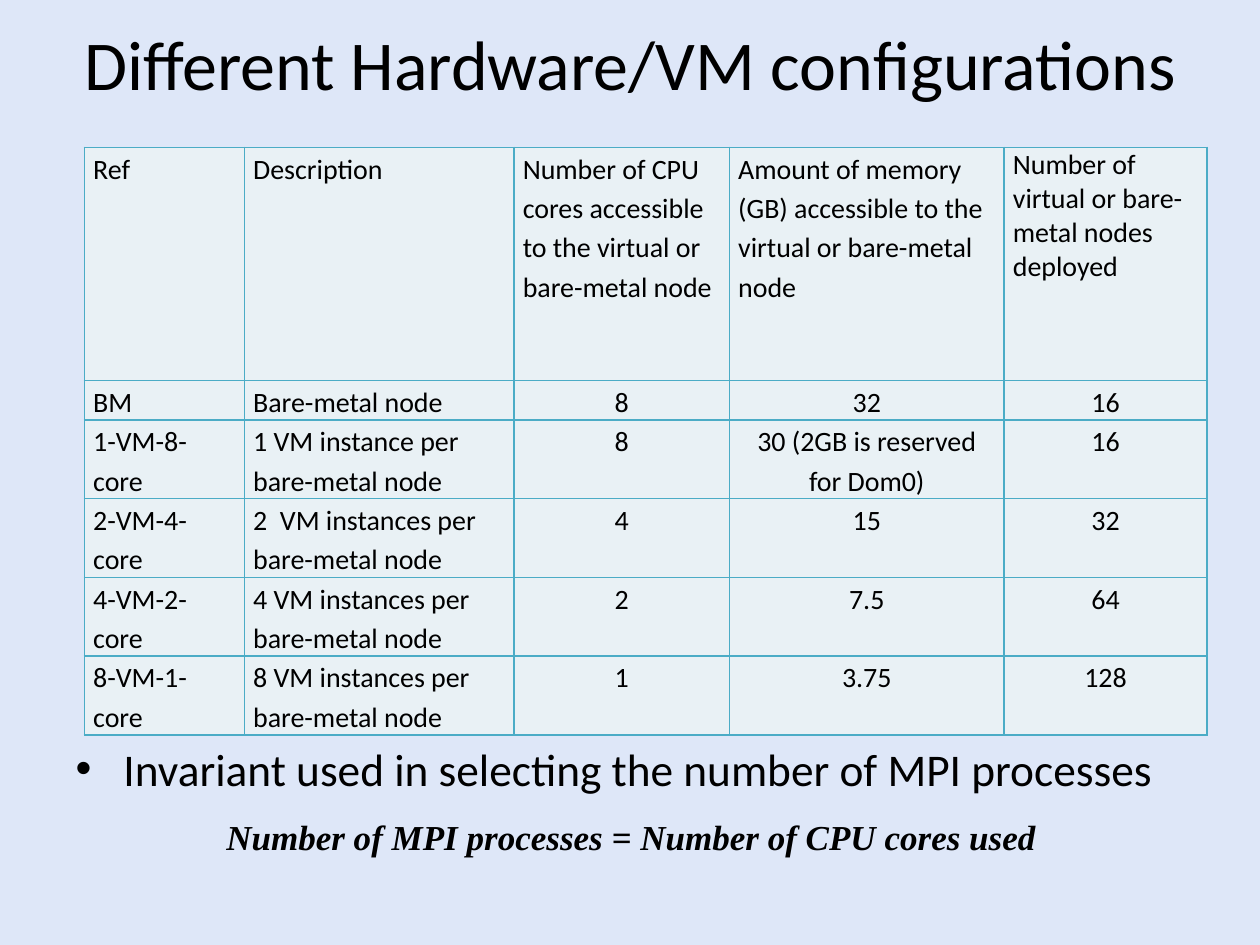
from lxml import etree
from pptx import Presentation
from pptx.dml.color import RGBColor
from pptx.enum import text
from pptx.oxml import ns
from pptx.util import Inches, Pt

BACKGROUND = RGBColor(0xDE, 0xE7, 0xF8)
CELL_FILL = RGBColor(0xE9, 0xF1, 0xF5)
BORDER = RGBColor(0x4B, 0xAC, 0xC6)
BLACK = RGBColor(0, 0, 0)

COLUMN_WIDTHS = [1.27, 2.14, 1.71, 2.18, 1.61]
ROW_HEIGHTS = [1.85, 0.31] + [0.625] * 4
CONFIGURATIONS = [
    ["Ref", "Description",
     "Number of CPU cores accessible to the virtual or bare-metal node",
     "Amount of memory (GB) accessible to the virtual or bare-metal node",
     "Number of virtual or bare-metal nodes deployed"],
    ["BM", "Bare-metal node", "8", "32", "16"],
    ["1-VM-8-core", "1 VM instance per bare-metal node", "8",
     "30 (2GB is reserved for Dom0)", "16"],
    ["2-VM-4- core", "2  VM instances per bare-metal node", "4", "15", "32"],
    ["4-VM-2-core", "4 VM instances per bare-metal node", "2", "7.5", "64"],
    ["8-VM-1-core", "8 VM instances per bare-metal node", "1", "3.75", "128"],
]


def set_font(font, size, name="Calibri", emphasis=None):
    """Format a font; emphasis turns on both bold and italic."""
    font.name, font.size = name, Pt(size)
    font.color.rgb = BLACK
    font.bold = font.italic = emphasis


def place(shape, left, top, width, height):
    shape.left, shape.top = Inches(left), Inches(top)
    shape.width, shape.height = Inches(width), Inches(height)


def add_title(slide, *box):
    title = slide.shapes.title
    place(title, *box)
    frame = title.text_frame
    frame.text = "Different Hardware/VM configurations"
    frame.auto_size = text.MSO_AUTO_SIZE.NONE
    frame.vertical_anchor = text.MSO_ANCHOR.MIDDLE
    paragraph = frame.paragraphs[0]
    paragraph.alignment = text.PP_ALIGN.CENTER
    set_font(paragraph.font, 40)


def add_invariant(slide, *box):
    invariant = slide.placeholders[1]
    place(invariant, *box)
    frame = invariant.text_frame
    frame.text = "Invariant used in selecting the number of MPI processes"
    frame.auto_size = text.MSO_AUTO_SIZE.NONE
    paragraph = frame.paragraphs[0]
    properties = paragraph._p.get_or_add_pPr()
    properties.set("marL", str(Inches(0.38)))
    properties.set("indent", str(-Inches(0.38)))
    paragraph.space_before = Pt(0)
    bullet = etree.SubElement(properties, ns.qn("a:buChar"))
    bullet.set("char", "•")
    set_font(paragraph.font, 25.9)


def add_borders(cell):
    """Draw all four sides; the lines must come before the cell's fill."""
    properties = cell._tc.get_or_add_tcPr()
    for index, side in enumerate(("lnL", "lnR", "lnT", "lnB")):
        line = etree.Element(ns.qn(f"a:{side}"), w=str(Pt(1)))
        fill = etree.SubElement(line, ns.qn("a:solidFill"))
        etree.SubElement(fill, ns.qn("a:srgbClr"), val=str(BORDER))
        properties.insert(index, line)


def fill_cell(cell, wording, centered, line_spacing):
    cell.fill.solid()
    cell.fill.fore_color.rgb = CELL_FILL
    add_borders(cell)
    cell.margin_left = cell.margin_right = Inches(0.07)
    cell.margin_top = cell.margin_bottom = 0
    cell.text = wording
    paragraph = cell.text_frame.paragraphs[0]
    paragraph.line_spacing = line_spacing
    if centered:
        paragraph.alignment = text.PP_ALIGN.CENTER
    set_font(paragraph.font, 16)


def add_configurations(slide, left, top):
    table = slide.shapes.add_table(
        len(ROW_HEIGHTS), len(COLUMN_WIDTHS), Inches(left), Inches(top),
        Inches(sum(COLUMN_WIDTHS)), Inches(sum(ROW_HEIGHTS))).table
    table.first_row = table.horz_banding = False
    for column, width in zip(table.columns, COLUMN_WIDTHS):
        column.width = Inches(width)
    for row, height in zip(table.rows, ROW_HEIGHTS):
        row.height = Inches(height)
    last_column = len(COLUMN_WIDTHS) - 1
    for r, wordings in enumerate(CONFIGURATIONS):
        for c, wording in enumerate(wordings):
            spacing = 1.0 if (r, c) == (0, last_column) else 1.15
            fill_cell(table.cell(r, c), wording, r > 0 and c > 1, spacing)


def add_formula(slide, *box):
    formula = slide.shapes.add_textbox(*map(Inches, box))
    frame = formula.text_frame
    frame.text = "Number of MPI processes = Number of CPU cores used"
    frame.word_wrap = False
    frame.vertical_anchor = text.MSO_ANCHOR.MIDDLE
    paragraph = frame.paragraphs[0]
    paragraph.alignment = text.PP_ALIGN.CENTER
    set_font(paragraph.font, 20, "Times New Roman", emphasis=True)


def main():
    deck = Presentation()
    deck.slide_width, deck.slide_height = Inches(10), Inches(7.5)
    slide = deck.slides.add_slide(deck.slide_layouts[1])
    slide.background.fill.solid()
    slide.background.fill.fore_color.rgb = BACKGROUND
    add_title(slide, 0.5, 0, 9, 1)
    add_invariant(slide, 0.5, 5.83, 9, 0.87)
    add_configurations(slide, 0.67, 1.17)
    add_formula(slide, 1.67, 6.42, 6.68, 0.44)
    deck.save("out.pptx")


if __name__ == "__main__":
    main()
